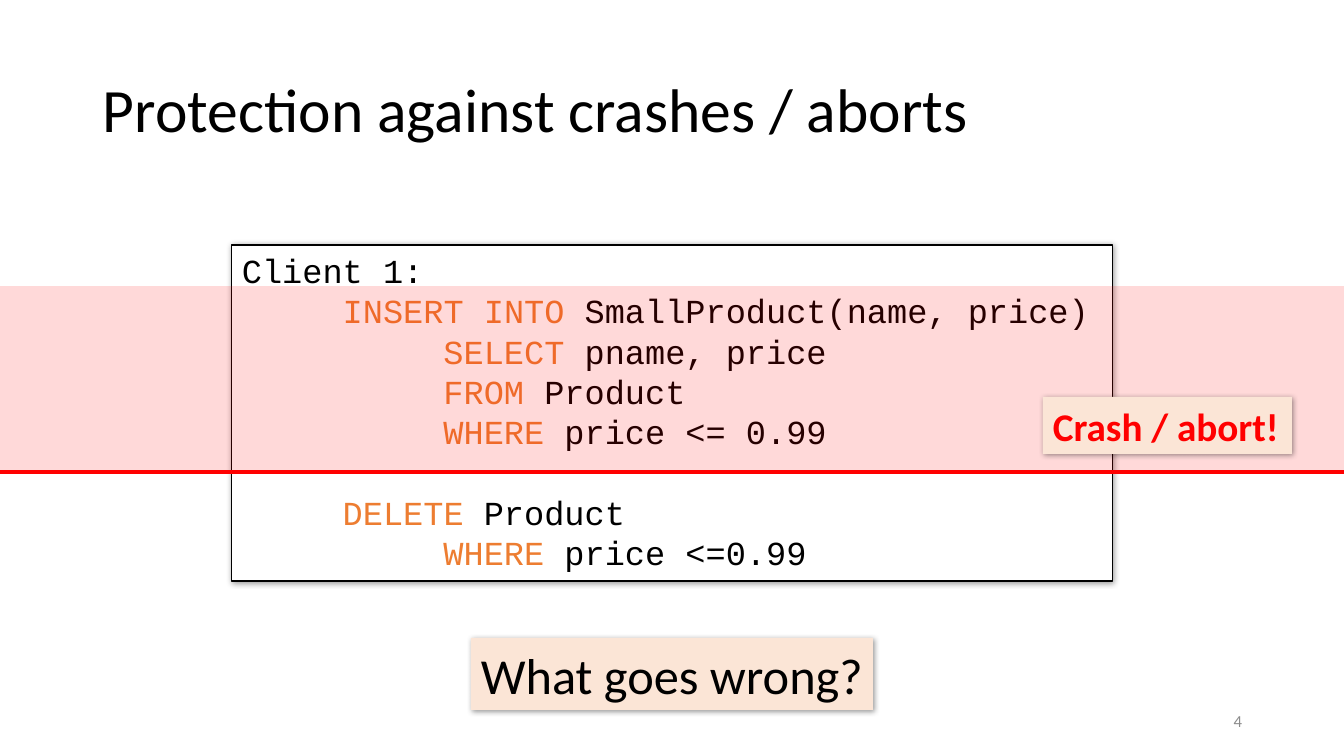
from dataclasses import dataclass
from typing import Optional

from lxml.etree import SubElement
from pptx import Presentation
from pptx.dml.color import RGBColor
from pptx.enum.shapes import MSO_CONNECTOR as Connector, MSO_SHAPE as Preset
from pptx.enum.text import MSO_ANCHOR as Anchor, PP_ALIGN as Align
from pptx.oxml.ns import qn
from pptx.util import Emu, Pt

PX_PER_INCH = 100.8
SLIDE_W, SLIDE_H = 1344, 756
CRASH_Y = 472
CODE_PITCH = 28.8
COLORS = {
    "text": "000000",
    "paper": "FFFFFF",
    "keyword": "ED7D31",
    "callout": "FBE5D6",
    "crash": "FF0000",
    "number": "8C8C8C",
}


@dataclass(frozen=True)
class Box:
    left: int
    top: int
    width: int
    height: int


@dataclass(frozen=True)
class Panel:
    box: Box
    fill: str
    border: Optional[str] = None
    opacity: int = 100
    raised: bool = True


@dataclass(frozen=True)
class CodeLine:
    level: int
    keyword: str
    rest: str
    gap: float = 0


CODE_PANEL = Panel(Box(232, 245, 881, 336), "paper", border="text")
QUESTION_PANEL = Panel(Box(471, 638, 402, 72), "callout")
LOST_WORK_PANEL = Panel(Box(0, 286, SLIDE_W, CRASH_Y - 286), "crash", opacity=15, raised=False)
CRASH_PANEL = Panel(Box(1043, 397, 249, 57), "callout")

CODE = [
    CodeLine(0, "", "Client 1:"),
    CodeLine(1, "INSERT INTO", " SmallProduct(name, price)"),
    CodeLine(2, "SELECT", " pname, price"),
    CodeLine(2, "FROM", " Product"),
    CodeLine(2, "WHERE", " price <= 0.99"),
    CodeLine(1, "DELETE", " Product", gap=CODE_PITCH),
    CodeLine(2, "WHERE", " price <=0.99"),
]


def px(length: float) -> Emu:
    return Emu(round(length * 914400 / PX_PER_INCH))


def place(box: Box) -> tuple:
    return px(box.left), px(box.top), px(box.width), px(box.height)


def rgb(name: str) -> RGBColor:
    return RGBColor.from_string(COLORS[name])


def add_run(paragraph, text: str, *, size: int, font: str = "Calibri",
            color: str = "text", bold: bool = False) -> None:
    run = paragraph.add_run()
    run.text = text
    run.font.size = Pt(size)
    run.font.name = font
    run.font.bold = bold
    run.font.color.rgb = rgb(color)


def write(shape, text: str, *, align=Align.LEFT, anchor=Anchor.TOP,
          wrap: bool = False, spacing: float = 1.0, **font_format) -> None:
    frame = shape.text_frame
    frame.word_wrap = wrap
    frame.vertical_anchor = anchor
    paragraph = frame.paragraphs[0]
    paragraph.alignment = align
    paragraph.line_spacing = spacing
    add_run(paragraph, text, **font_format)


def write_code(shape, lines: list[CodeLine]) -> None:
    frame = shape.text_frame
    frame.word_wrap = True
    frame.vertical_anchor = Anchor.TOP
    for index, line in enumerate(lines):
        paragraph = frame.add_paragraph() if index else frame.paragraphs[0]
        paragraph.alignment = Align.LEFT
        paragraph.line_spacing = Pt(CODE_PITCH)
        paragraph.space_before = Pt(line.gap)
        properties = paragraph._p.get_or_add_pPr()
        properties.set("marL", str(line.level * 914400))
        properties.set("indent", "0")
        for text, color in ((line.keyword, "keyword"), (line.rest, "text")):
            if text:
                add_run(paragraph, text, size=24, font="Courier New", color=color)


def add_shadow(shape) -> None:
    effects = shape._element.spPr.find(qn("a:effectLst"))
    shadow = SubElement(effects, qn("a:outerShdw"), blurRad=str(Pt(4)), dist=str(Pt(1)),
                        dir="2700000", algn="tl", rotWithShape="0")
    tint = SubElement(shadow, qn("a:srgbClr"), val=COLORS["text"])
    SubElement(tint, qn("a:alpha"), val="40000")


def add_panel(slide, panel: Panel):
    shape = slide.shapes.add_shape(Preset.RECTANGLE, *place(panel.box))
    shape.shadow.inherit = False
    shape.fill.solid()
    shape.fill.fore_color.rgb = rgb(panel.fill)
    if panel.opacity < 100:
        tint = shape._element.spPr.find(qn("a:solidFill")).find(qn("a:srgbClr"))
        SubElement(tint, qn("a:alpha"), val=str(panel.opacity * 1000))
    if panel.border:
        shape.line.color.rgb = rgb(panel.border)
        shape.line.width = Pt(0.75)
    else:
        shape.line.fill.background()
    if panel.raised:
        add_shadow(shape)
    return shape


def add_crash_line(slide) -> None:
    crash_line = slide.shapes.add_connector(
        Connector.STRAIGHT, px(0), px(CRASH_Y), px(SLIDE_W), px(CRASH_Y))
    crash_line.line.color.rgb = rgb("crash")
    crash_line.line.width = Pt(3.5)
    SubElement(crash_line._element.spPr, qn("a:effectLst"))


def main() -> None:
    deck = Presentation()
    deck.slide_width, deck.slide_height = px(SLIDE_W), px(SLIDE_H)
    slide = deck.slides.add_slide(deck.slide_layouts[6])

    page_number = slide.shapes.add_textbox(*place(Box(950, 701, 302, 40)))
    write(page_number, "4", size=12, color="number", align=Align.RIGHT,
          anchor=Anchor.MIDDLE, wrap=True)
    title = slide.shapes.add_textbox(*place(Box(93, 40, 1159, 146)))
    write(title, "Protection against crashes / aborts", size=44,
          anchor=Anchor.MIDDLE, wrap=True, spacing=0.9)

    write_code(add_panel(slide, CODE_PANEL), CODE)
    write(add_panel(slide, QUESTION_PANEL), "What goes wrong?", size=36,
          align=Align.CENTER, anchor=Anchor.MIDDLE)
    add_crash_line(slide)
    add_panel(slide, LOST_WORK_PANEL)
    write(add_panel(slide, CRASH_PANEL), "Crash / abort!", size=28, color="crash", bold=True)

    deck.save("out.pptx")


if __name__ == "__main__":
    main()
